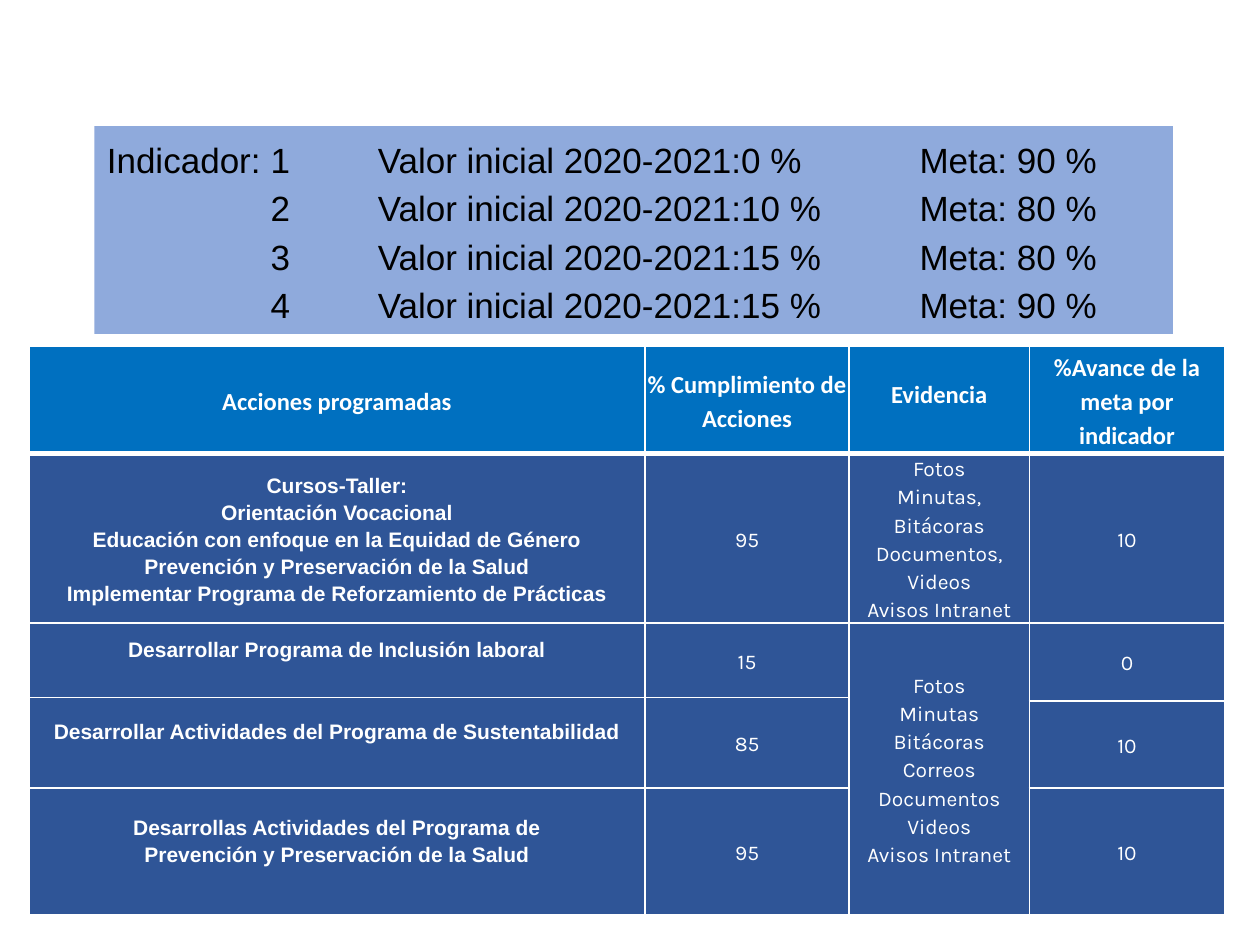
import dataclasses
import typing

import lxml.etree
import pptx
import pptx.dml.color
import pptx.enum.shapes
import pptx.enum.text
import pptx.oxml.ns
import pptx.util

Inches = pptx.util.Inches
Pt = pptx.util.Pt
ALIGN = pptx.enum.text.PP_ALIGN
ANCHOR = pptx.enum.text.MSO_ANCHOR


@dataclasses.dataclass(frozen=True)
class Font:
    name: str
    size: int
    bold: bool
    color: str


@dataclasses.dataclass(frozen=True)
class Theme:
    panel: str = "8FAADC"
    head: str = "0070C0"
    body: str = "2F5597"
    rule: str = "FFFFFF"
    thin: float = 1
    thick: float = 3
    spacing: float = 1.15
    goal: Font = Font("Arial", 20, False, "000000")
    title: Font = Font("Calibri", 14, True, "FFFFFF")
    action: Font = Font("Arial", 12, True, "FFFFFF")
    value: Font = Font("Karla", 12, False, "FFFFFF")


THEME = Theme()


@dataclasses.dataclass(frozen=True)
class Entry:
    row: int
    col: int
    lines: tuple[str, ...]
    font: Font = THEME.value
    span: int = 1
    lift: float = 0


@dataclasses.dataclass(frozen=True)
class Goal:
    label: str
    number: int
    start: int
    target: int


GOALS = (
    Goal("Indicador:", 1, 0, 90),
    Goal("", 2, 10, 80),
    Goal("", 3, 15, 80),
    Goal("", 4, 15, 90),
)
STOPS = (1.3, 2.15, 6.45)
WIDTHS = (4.89, 1.62, 1.43, 1.55)
HEIGHTS = (0.85, 1.21, 0.59, 0.03, 0.69, 1.01)
ENTRIES = (
    Entry(0, 0, ("Acciones programadas",), THEME.title),
    Entry(0, 1, ("% Cumplimiento de Acciones",), THEME.title),
    Entry(0, 2, ("Evidencia",), THEME.title, lift=0.11),
    Entry(0, 3, ("%Avance de la meta por indicador",), THEME.title),
    Entry(1, 0, (
        "Cursos-Taller:",
        "Orientación Vocacional",
        "Educación con enfoque en la Equidad de Género",
        "Prevención y Preservación de la Salud",
        "Implementar Programa de Reforzamiento de Prácticas",
    ), THEME.action),
    Entry(1, 1, ("95",)),
    Entry(1, 2, ("Fotos", "Minutas, Bitácoras", "Documentos, Videos", "Avisos Intranet")),
    Entry(1, 3, ("10",)),
    Entry(2, 0, ("Desarrollar Programa de Inclusión laboral",), THEME.action, lift=0.19),
    Entry(2, 1, ("15",)),
    Entry(2, 2, (
        "Fotos", "Minutas", "Bitácoras", "Correos", "Documentos", "Videos", "Avisos Intranet",
    ), span=4),
    Entry(2, 3, ("0",), span=2),
    Entry(3, 0, ("Desarrollar Actividades del Programa de Sustentabilidad",),
          THEME.action, span=2, lift=0.19),
    Entry(3, 1, ("85",), span=2),
    Entry(4, 3, ("10",)),
    Entry(5, 0, (
        "Desarrollas Actividades del Programa de",
        "Prevención y Preservación de la Salud",
    ), THEME.action, lift=0.19),
    Entry(5, 1, ("95",)),
    Entry(5, 3, ("10",)),
)


def tint(code: str) -> pptx.dml.color.RGBColor:
    return pptx.dml.color.RGBColor.from_string(code)


def add_node(parent: typing.Any, tag: str, **attrs: str) -> typing.Any:
    return lxml.etree.SubElement(parent, pptx.oxml.ns.qn(tag), **attrs)


def write(frame: typing.Any, lines: typing.Iterable[str], font: Font,
          align: typing.Any, stops: tuple[float, ...] = ()) -> None:
    for index, line in enumerate(lines):
        para = frame.add_paragraph() if index else frame.paragraphs[0]
        para.text = line
        if stops:
            tabs = add_node(para._p.get_or_add_pPr(), "a:tabLst")
            for stop in stops:
                add_node(tabs, "a:tab", pos=str(int(Inches(stop))), algn="l")
        para.alignment = align
        para.line_spacing = THEME.spacing
        para.font.name = font.name
        para.font.size = Pt(font.size)
        para.font.bold = font.bold
        para.font.color.rgb = tint(font.color)


def draw_goals(slide: typing.Any) -> None:
    box = slide.shapes.add_shape(
        pptx.enum.shapes.MSO_SHAPE.RECTANGLE,
        Inches(0.75), Inches(1), Inches(8.56), Inches(1.65))
    box.shadow.inherit = False
    box.fill.solid()
    box.fill.fore_color.rgb = tint(THEME.panel)
    box.line.fill.background()
    frame = box.text_frame
    frame.word_wrap = True
    frame.vertical_anchor = ANCHOR.TOP
    lines = [
        f"{goal.label}\t{goal.number}\tValor inicial 2020-2021:{goal.start} %\tMeta: {goal.target} %"
        for goal in GOALS
    ]
    write(frame, lines, THEME.goal, ALIGN.LEFT, STOPS)


def style_cell(cell: typing.Any, row: int) -> None:
    props = cell._tc.get_or_add_tcPr()
    edges = {"L": THEME.thin, "R": THEME.thin,
             "T": THEME.thick if row == 1 else THEME.thin,
             "B": THEME.thick if row == 0 else THEME.thin}
    for side, width in edges.items():
        line = add_node(props, f"a:ln{side}", w=str(int(Pt(width))))
        add_node(add_node(line, "a:solidFill"), "a:srgbClr", val=THEME.rule)
    cell.fill.solid()
    cell.fill.fore_color.rgb = tint(THEME.body if row else THEME.head)
    cell.margin_left = cell.margin_right = Inches(0.01)
    cell.margin_top = cell.margin_bottom = 0
    cell.vertical_anchor = ANCHOR.MIDDLE


def draw_table(slide: typing.Any) -> None:
    table = slide.shapes.add_table(
        len(HEIGHTS), len(WIDTHS), Inches(0.23), Inches(2.75),
        Inches(sum(WIDTHS)), Inches(sum(HEIGHTS))).table
    table.horz_banding = False
    for col, width in zip(table.columns, WIDTHS):
        col.width = Inches(width)
    for row, height in enumerate(HEIGHTS):
        table.rows[row].height = Inches(height)
        for cell in table.rows[row].cells:
            style_cell(cell, row)
    for entry in ENTRIES:
        cell = table.cell(entry.row, entry.col)
        if entry.span > 1:
            cell.merge(table.cell(entry.row + entry.span - 1, entry.col))
        cell.margin_bottom = Inches(entry.lift)
        write(cell.text_frame, entry.lines, entry.font, ALIGN.CENTER)


def main() -> None:
    deck = pptx.Presentation()
    deck.slide_width = Inches(10)
    deck.slide_height = Inches(7.5)
    slide = deck.slides.add_slide(deck.slide_layouts[6])
    draw_goals(slide)
    draw_table(slide)
    deck.save("out.pptx")


if __name__ == "__main__":
    main()
